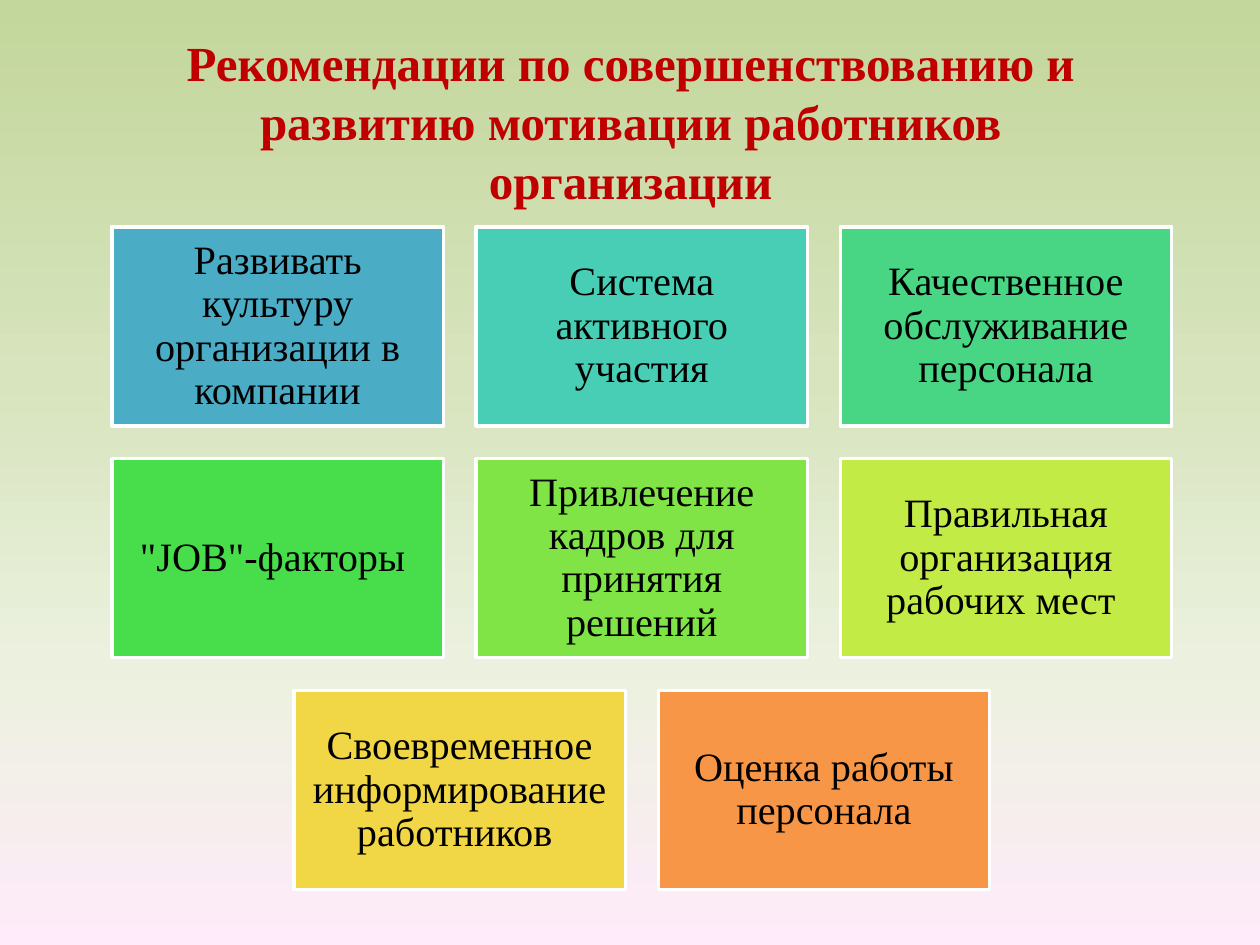
from dataclasses import dataclass

from lxml import etree
from pptx import Presentation
from pptx.dml.color import RGBColor
from pptx.enum import shapes, text
from pptx.oxml import ns
from pptx.util import Inches, Pt


@dataclass(frozen=True)
class Theme:
    font: str = "Times New Roman"
    title_size: int = 28
    card_size: int = 23
    title_color: str = "C00000"
    text_color: str = "000000"
    border_color: str = "FFFFFF"
    background: tuple = ((0, "C3D69B"), (40, "D7E4BD"), (70, "EBF1DE"), (100, "FFEBFA"))


THEME = Theme()
TITLE = "Рекомендации по совершенствованию и развитию мотивации работников организации"
CARD_ROWS = [
    [
        ("Развивать культуру организации в компании", "4BACC6"),
        ("Система активного участия", "49CEB6"),
        ("Качественное обслуживание персонала", "48D684"),
    ],
    [
        ("\"JOB\"-факторы ", "47DD4B"),
        ("Привлечение кадров для принятия решений", "80E446"),
        ("Правильная организация рабочих мест ", "C3EB46"),
    ],
    [
        ("Своевременное информирование работников ", "F1D746"),
        ("Оценка работы персонала", "F79646"),
    ],
]


def paint_background(slide):
    fill = slide.background.fill
    fill.gradient()
    fill.gradient_angle = 270
    stops = slide.background._cSld.find(".//" + ns.qn("a:gsLst"))
    for stop in list(stops):
        stops.remove(stop)
    for position, color in THEME.background:
        stop = etree.SubElement(stops, ns.qn("a:gs"), pos=str(position * 1000))
        etree.SubElement(stop, ns.qn("a:srgbClr"), val=color)


def write_text(frame, content, size, color, bold=False):
    frame.word_wrap = True
    paragraph = frame.paragraphs[0]
    paragraph.alignment = text.PP_ALIGN.CENTER
    run = paragraph.add_run()
    run.text = content
    run.font.name = THEME.font
    run.font.size = Pt(size)
    run.font.bold = bold
    run.font.color.rgb = RGBColor.from_string(color)
    return paragraph


def place_title(slide, left, top, width, height):
    title = slide.shapes.title
    title.left, title.top, title.width, title.height = left, top, width, height
    frame = title.text_frame
    frame.vertical_anchor = text.MSO_ANCHOR.TOP
    frame.auto_size = text.MSO_AUTO_SIZE.SHAPE_TO_FIT_TEXT
    write_text(frame, TITLE, THEME.title_size, THEME.title_color, bold=True)


def add_card(slide, label, color, left, top, width, height):
    card = slide.shapes.add_shape(shapes.MSO_SHAPE.RECTANGLE, left, top, width, height)
    card.shadow.inherit = False
    card.fill.solid()
    card.fill.fore_color.rgb = RGBColor.from_string(color)
    card.line.color.rgb = RGBColor.from_string(THEME.border_color)
    card.line.width = Pt(2)
    frame = card.text_frame
    frame.vertical_anchor = text.MSO_ANCHOR.MIDDLE
    frame.margin_left = frame.margin_right = Inches(0.1)
    frame.margin_top = frame.margin_bottom = Inches(0.1)
    paragraph = write_text(frame, label, THEME.card_size, THEME.text_color)
    paragraph.line_spacing = 0.9


def place_cards(slide, left, top, width, height):
    gap = Inches(0.26)
    columns = max(len(row) for row in CARD_ROWS)
    card_width = (width - gap * (columns - 1)) // columns
    card_height = (height - gap * (len(CARD_ROWS) - 1)) // len(CARD_ROWS)
    for row_index, row in enumerate(CARD_ROWS):
        row_width = len(row) * (card_width + gap) - gap
        row_left = left + (width - row_width) // 2
        row_top = top + row_index * (card_height + gap)
        for column, (label, color) in enumerate(row):
            card_left = row_left + column * (card_width + gap)
            add_card(slide, label, color, card_left, row_top, card_width, card_height)


def main():
    presentation = Presentation()
    presentation.slide_width = Inches(10)
    presentation.slide_height = Inches(7.5)
    slide = presentation.slides.add_slide(presentation.slide_layouts.get_by_name("Title Only"))
    paint_background(slide)
    place_title(slide, Inches(0.83), Inches(0.21), Inches(8.35), Inches(1.51))
    place_cards(slide, Inches(0.89), Inches(1.8), Inches(8.41), Inches(5.26))
    presentation.save("out.pptx")


if __name__ == "__main__":
    main()
